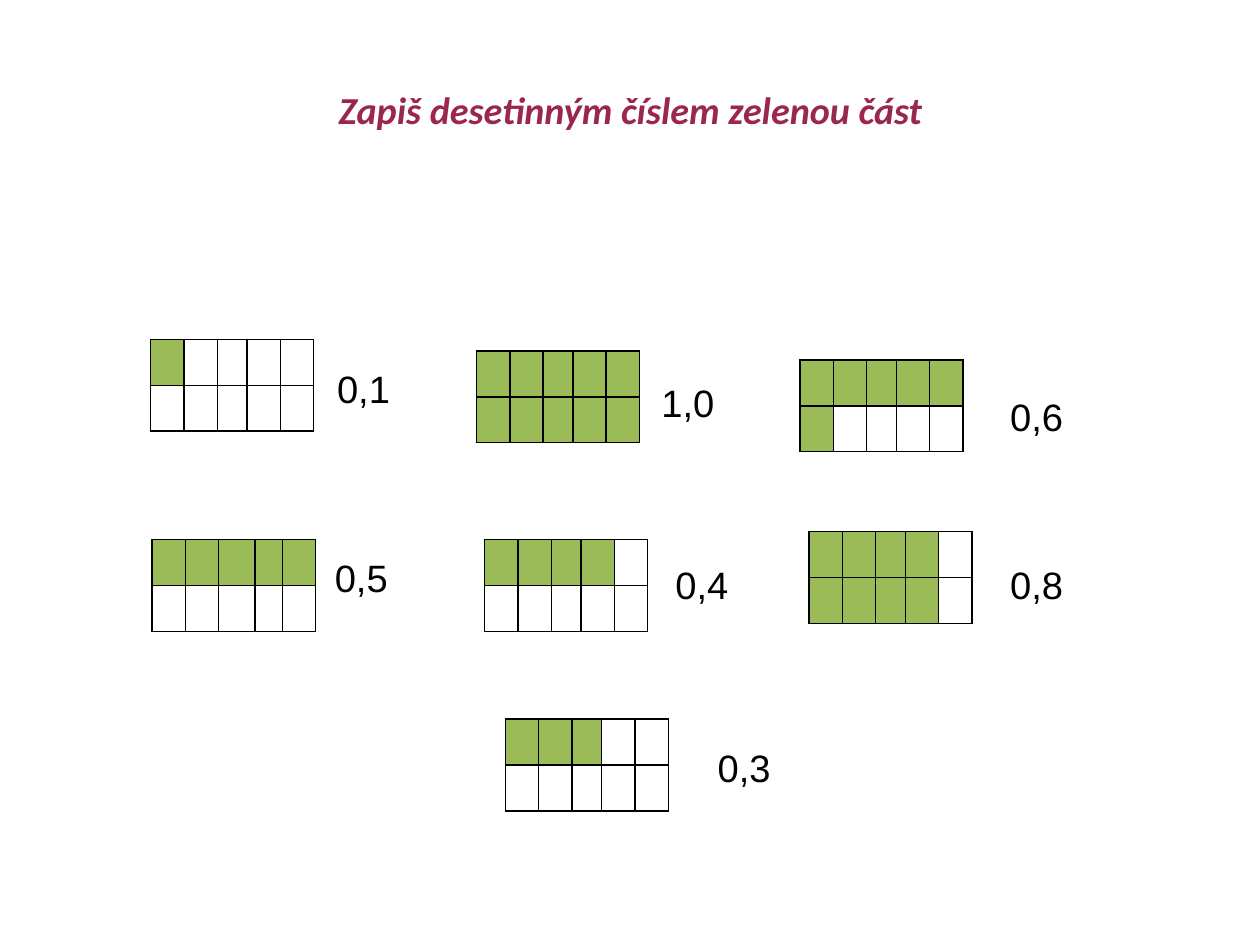
import pptx
import pptx.util
import pptx.dml.color
import pptx.enum.text
import lxml.etree
from dataclasses import dataclass

Cm = pptx.util.Cm
Pt = pptx.util.Pt
Rgb = pptx.dml.color.RGBColor
Align = pptx.enum.text.PP_ALIGN
Anchor = pptx.enum.text.MSO_ANCHOR
Fit = pptx.enum.text.MSO_AUTO_SIZE

TITLE = "Zapiš desetinným číslem zelenou část"
EVEN = (0.74, 0.74, 0.66, 0.74, 0.74)
ODD = (0.74, 0.74, 0.81, 0.59, 0.74)
TASKS = [
    ("0,1", (1, 0), (3.35, 7.54), (7.24, 8.0), EVEN),
    ("1,0", (5, 5), (10.59, 7.8), (14.45, 8.31), EVEN),
    ("0,6", (5, 1), (17.78, 8.0), (22.2, 8.61), EVEN),
    ("0,5", (5, 0), (3.38, 11.99), (7.19, 12.19), ODD),
    ("0,4", (4, 0), (10.77, 11.99), (14.76, 12.34), EVEN),
    ("0,8", (4, 4), (17.98, 11.81), (22.2, 12.34), EVEN),
    ("0,3", (3, 0), (11.23, 15.98), (15.7, 16.41), EVEN),
]
ROW = 1.02


@dataclass
class Theme:
    title: str = "99284C"
    ink: str = "000000"
    green: str = "9BBB59"
    blank: str = "FFFFFF"
    size: int = 24
    line: int = 1


theme = Theme()


def write(frame, text, font="Arial", color=theme.ink, align=Align.LEFT,
          anchor=Anchor.TOP, inset=(0.25, 0.13), bold=False, italic=False):
    frame.word_wrap = True
    frame.auto_size = Fit.NONE
    frame.vertical_anchor = anchor
    frame.margin_left = frame.margin_right = Cm(inset[0])
    frame.margin_top = frame.margin_bottom = Cm(inset[1])
    para = frame.paragraphs[0]
    para.alignment = align
    run = para.add_run()
    run.text = text
    run.font.name = font
    run.font.size = Pt(theme.size)
    run.font.bold = bold
    run.font.italic = italic
    run.font.color.rgb = Rgb.from_string(color)


def edge(cell):
    space = "http://schemas.openxmlformats.org/drawingml/2006/main"
    props = cell._tc.get_or_add_tcPr()
    for side in ("lnL", "lnR", "lnT", "lnB"):
        line = lxml.etree.SubElement(props, f"{{{space}}}{side}", w=str(Pt(theme.line)))
        fill = lxml.etree.SubElement(line, f"{{{space}}}solidFill")
        lxml.etree.SubElement(fill, f"{{{space}}}srgbClr", val=theme.ink)


def grid(slide, counts, spot, widths):
    left, top = spot
    table = slide.shapes.add_table(
        len(counts), len(widths), Cm(left), Cm(top),
        Cm(sum(widths)), Cm(ROW * len(counts))).table
    table.first_row = False
    table.horz_banding = False
    for column, width in zip(table.columns, widths):
        column.width = Cm(width)
    for row, count in zip(table.rows, counts):
        row.height = Cm(ROW)
        for place, cell in enumerate(row.cells):
            cell.margin_top = cell.margin_bottom = 0
            edge(cell)
            cell.fill.solid()
            shade = theme.green if place < count else theme.blank
            cell.fill.fore_color.rgb = Rgb.from_string(shade)


def main():
    deck = pptx.Presentation()
    deck.slide_width, deck.slide_height = Cm(28), Cm(21)
    slide = deck.slides.add_slide(deck.slide_layouts.get_by_name("Title Only"))
    title = slide.shapes.title
    title.left, title.top = Cm(2.06), Cm(0.86)
    title.width, title.height = Cm(23.9), Cm(3.15)
    write(title.text_frame, TITLE, font="Calibri", color=theme.title,
          align=Align.CENTER, anchor=Anchor.MIDDLE, inset=(0, 0),
          bold=True, italic=True)
    for answer, counts, spot, label, widths in TASKS:
        grid(slide, counts, spot, widths)
        box = slide.shapes.add_textbox(Cm(label[0]), Cm(label[1]), Cm(3), Cm(1.2))
        write(box.text_frame, answer)
    deck.save("out.pptx")


if __name__ == "__main__":
    main()
